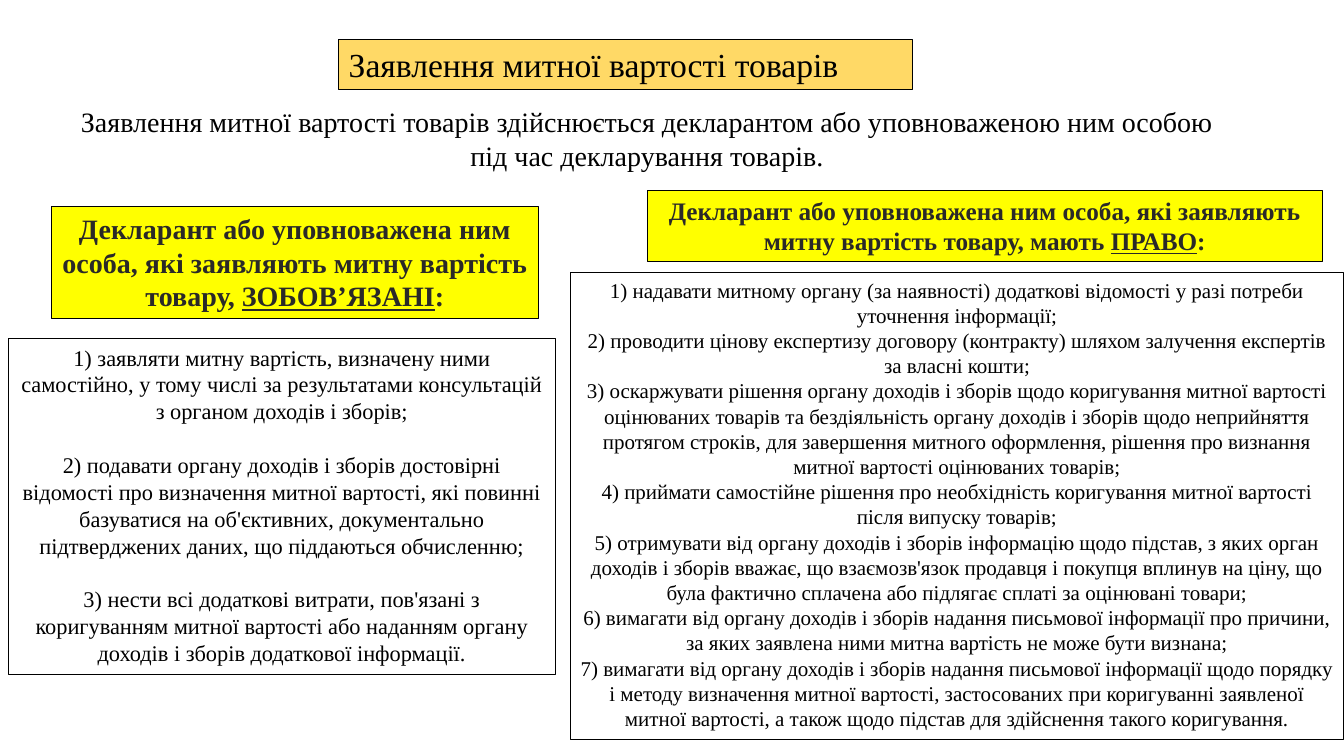
"""Build the slide on declaring the customs value of goods."""
from pptx import Presentation
from pptx.dml.color import RGBColor
from pptx.enum.shapes import MSO_SHAPE as Shape
from pptx.enum.text import MSO_ANCHOR as Anchor, MSO_AUTO_SIZE as AutoSize, PP_ALIGN as Align
from pptx.util import Pt

DUTIES = [
    "1) заявляти митну вартість, визначену ними самостійно, у тому числі за результатами консультацій з органом доходів і зборів;",
    "2) подавати органу доходів і зборів достовірні відомості про визначення митної вартості, які повинні базуватися на об'єктивних, документально підтверджених даних, що піддаються обчисленню;",
    "3) нести всі додаткові витрати, пов'язані з коригуванням митної вартості або наданням органу доходів і зборів додаткової інформації.",
]
RIGHTS = [
    "1) надавати митному органу (за наявності) додаткові відомості у разі потреби уточнення інформації;",
    "2) проводити цінову експертизу договору (контракту) шляхом залучення експертів за власні кошти;",
    "3) оскаржувати рішення органу доходів і зборів щодо коригування митної вартості оцінюваних товарів та бездіяльність органу доходів і зборів щодо неприйняття протягом строків, для завершення митного оформлення, рішення про визнання митної вартості оцінюваних товарів;",
    "4) приймати самостійне рішення про необхідність коригування митної вартості після випуску товарів;",
    "5) отримувати від органу доходів і зборів інформацію щодо підстав, з яких орган доходів і зборів вважає, що взаємозв'язок продавця і покупця вплинув на ціну, що була фактично сплачена або підлягає сплаті за оцінювані товари;",
    "6) вимагати від органу доходів і зборів надання письмової інформації про причини, за яких заявлена ними митна вартість не може бути визнана;",
    "7) вимагати від органу доходів і зборів надання письмової інформації щодо порядку і методу визначення митної вартості, застосованих при коригуванні заявленої митної вартості, а також щодо підстав для здійснення такого коригування.",
]
DECLARANT = "Декларант або уповноважена ним особа, які заявляють митну вартість товару, "


def color(value):
    return RGBColor.from_string(value)


def apply(target, values):
    for name, value in values.items():
        setattr(target, name, value)


class Painter:
    """Hold the text style and the current slide."""

    font = "Times New Roman"
    ink = "000000"
    heading_ink = "2A2928"
    heading_fill = "FFFF00"

    def __init__(self, page):
        self.page = page

    def fill_text(self, box, paragraphs, size, ink=ink, align=Align.CENTER, bold=False, gap=0):
        frame = box.text_frame
        apply(frame, {"word_wrap": True, "auto_size": AutoSize.SHAPE_TO_FIT_TEXT,
                      "vertical_anchor": Anchor.TOP})
        for index, spans in enumerate(paragraphs):
            para = frame.add_paragraph() if index else frame.paragraphs[0]
            apply(para, {"alignment": align, "space_before": Pt(gap if index else 0)})
            for text, underline in spans:
                span = para.add_run()
                span.text = text
                apply(span.font, {"name": self.font, "size": Pt(size), "bold": bold,
                                  "underline": underline})
                span.font.color.rgb = color(ink)

    def frame(self, place, fill=None):
        box = self.page.shapes.add_shape(Shape.RECTANGLE, *map(Pt, place))
        box.shadow.inherit = False
        if fill:
            box.fill.solid()
            box.fill.fore_color.rgb = color(fill)
        else:
            box.fill.background()
        box.line.color.rgb = color(self.ink)
        box.line.width = Pt(0.75)
        return box

    def title(self, place, text):
        self.fill_text(self.frame(place, "FFD966"), [[(text, False)]], 24, align=Align.LEFT)

    def intro(self, place, text):
        box = self.page.shapes.add_textbox(*map(Pt, place))
        self.fill_text(box, [[(text, False)]], 20)

    def heading(self, place, lead, key, size):
        spans = [(lead, False), (key, True), (":", False)]
        self.fill_text(self.frame(place, self.heading_fill), [spans], size,
                       ink=self.heading_ink, bold=True)

    def listing(self, place, items, size, gap=0):
        self.fill_text(self.frame(place), [[(item, False)] for item in items], size, gap=gap)


def main():
    deck = Presentation()
    apply(deck, {"slide_width": Pt(960), "slide_height": Pt(540)})
    painter = Painter(deck.slides.add_slide(deck.slide_layouts[6]))
    painter.intro((36.7, 71.3, 851, 55.4),
                  "Заявлення митної вартості товарів здійснюється декларантом або уповноваженою ним особою під час декларування товарів.")
    painter.title((242, 28, 409.7, 36), "Заявлення митної вартості товарів")
    painter.listing((5.8, 242, 391, 239.8), DUTIES, 16, gap=19.2)
    painter.listing((407.5, 194.4, 552.2, 334), RIGHTS, 15)
    painter.heading((462.2, 136, 482.4, 51), DECLARANT + "мають ", "ПРАВО", 18)
    painter.heading((36.7, 147.6, 347.8, 80), DECLARANT, "ЗОБОВ’ЯЗАНІ", 20)
    deck.save("out.pptx")


if __name__ == "__main__":
    main()
